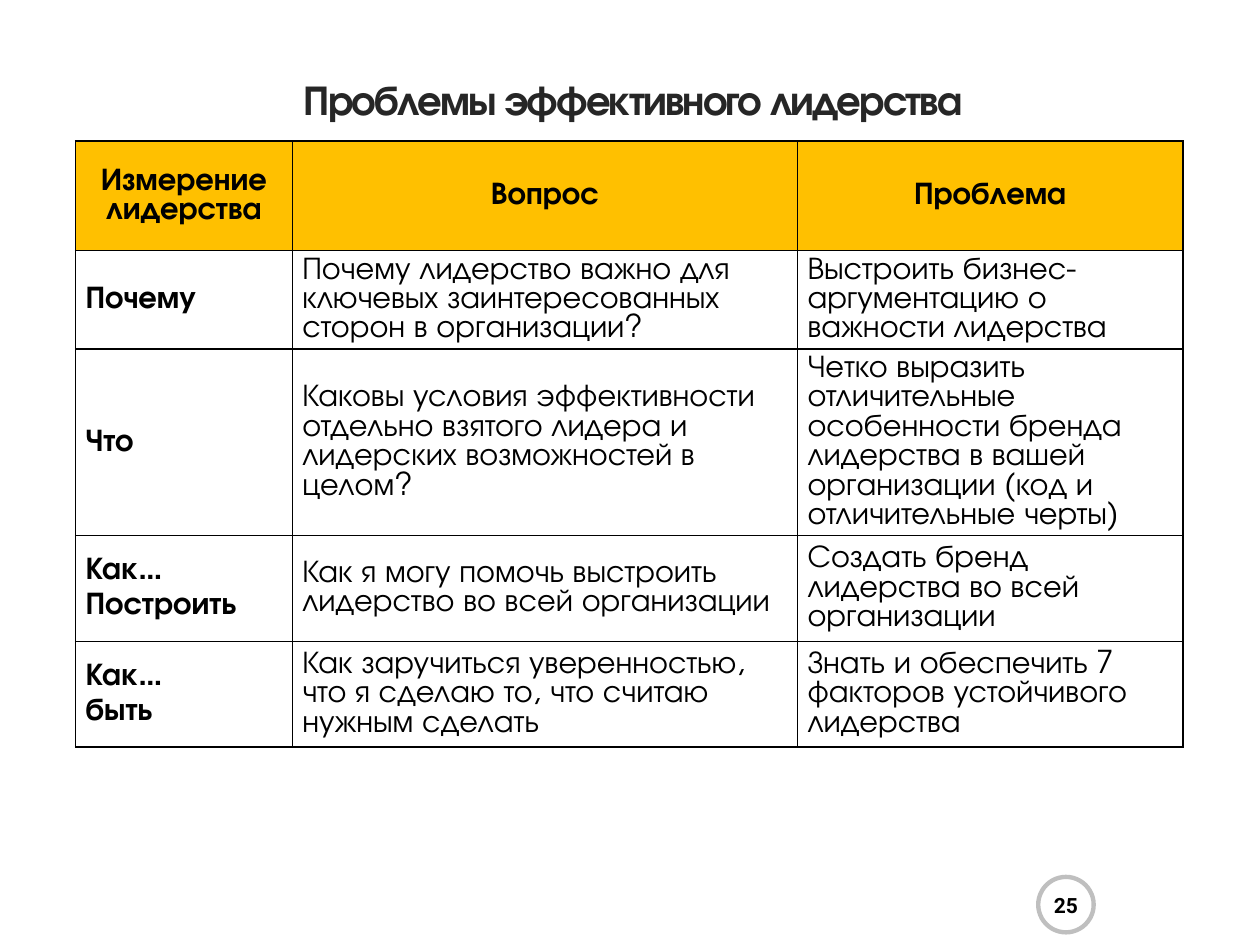
import pptx
import pptx.dml.color
import pptx.enum.shapes
import pptx.enum.text
import pptx.oxml
import pptx.oxml.ns
import pptx.util
from pptx.util import Inches

RGBColor = pptx.dml.color.RGBColor
Align = pptx.enum.text.PP_ALIGN
MIDDLE = pptx.enum.text.MSO_ANCHOR.MIDDLE

BLACK = RGBColor(0x00, 0x00, 0x00)
WHITE = RGBColor(0xFF, 0xFF, 0xFF)
TITLE_GREY = RGBColor(0x26, 0x26, 0x26)
RING_GREY = RGBColor(0xBF, 0xBF, 0xBF)
AMBER = RGBColor(0xFF, 0xC0, 0x00)

BODY_FONT = "TeX Gyre Adventor"
NUMBER_FONT = "Roboto"

COLUMN_WIDTHS = [1.72, 4.01, 3.06]
ROW_HEIGHTS = [0.87, 0.75, 0.84, 0.84, 0.84]
ROWS = [
    ["Измерение лидерства", "Вопрос", "Проблема"],
    ["Почему",
     "Почему лидерство важно для ключевых заинтересованных сторон в организации?",
     "Выстроить бизнес-аргументацию о важности лидерства"],
    ["Что",
     "Каковы условия эффективности отдельно взятого лидера и лидерских возможностей в целом?",
     "Четко выразить отличительные особенности бренда лидерства в вашей "
     "организации (код и отличительные черты)"],
    ["Как…\nПостроить",
     "Как я могу помочь выстроить лидерство во всей организации",
     "Создать бренд лидерства во всей организации"],
    ["Как…\nбыть",
     "Как заручиться уверенностью, что я сделаю то, что считаю нужным сделать",
     "Знать и обеспечить 7 факторов устойчивого лидерства"],
]


def write_text(frame, text, font=BODY_FONT, size=18, color=BLACK, bold=False,
               align=Align.LEFT, line_spacing=None, tracking=None):
    """Write one paragraph per line of text, spaced by a fifth of the size."""
    frame.word_wrap = True
    for index, line in enumerate(text.split("\n")):
        paragraph = frame.add_paragraph() if index else frame.paragraphs[0]
        paragraph.alignment = align
        paragraph.space_before = pptx.util.Pt(0.2 * size if index else 0)
        if line_spacing:
            paragraph.line_spacing = pptx.util.Pt(line_spacing)
        run = paragraph.add_run()
        run.text = line
        run.font.name = font
        run.font.size = pptx.util.Pt(size)
        run.font.bold = bold
        run.font.color.rgb = color
        if tracking:
            run.font._element.set("spc", str(round(tracking * 100)))


def set_borders(cell, color=BLACK, width=1):
    properties = cell._tc.get_or_add_tcPr()
    for index, side in enumerate(("lnL", "lnR", "lnT", "lnB")):
        border = pptx.oxml.parse_xml(
            f'<a:{side} {pptx.oxml.ns.nsdecls("a")} w="{pptx.util.Pt(width)}">'
            f'<a:solidFill><a:srgbClr val="{color}"/></a:solidFill></a:{side}>')
        properties.insert(index, border)


class SlideBuilder:
    """Holds the current slide and draws its parts in one style."""

    def __init__(self, presentation):
        self.slide = presentation.slides.add_slide(presentation.slide_layouts[5])
        background = self.slide.background.fill
        background.solid()
        background.fore_color.rgb = WHITE

    def title(self, text, left, top, width, height):
        title = self.slide.shapes.title
        title.left, title.top = Inches(left), Inches(top)
        title.width, title.height = Inches(width), Inches(height)
        title.text_frame.vertical_anchor = MIDDLE
        write_text(title.text_frame, text, size=24, color=TITLE_GREY, bold=True,
                   align=Align.CENTER, line_spacing=25.1, tracking=-1.1)

    def table(self, rows, left, top):
        table = self.slide.shapes.add_table(
            len(rows), len(COLUMN_WIDTHS), Inches(left), Inches(top),
            Inches(sum(COLUMN_WIDTHS)), Inches(sum(ROW_HEIGHTS))).table
        table.first_row = table.horz_banding = False
        for column, width in zip(table.columns, COLUMN_WIDTHS):
            column.width = Inches(width)
        for row, height in zip(table.rows, ROW_HEIGHTS):
            row.height = Inches(height)
        for row_index, texts in enumerate(rows):
            for column_index, text in enumerate(texts):
                self.cell(table.cell(row_index, column_index), text,
                          header=row_index == 0, label=column_index == 0)

    def cell(self, cell, text, header, label):
        cell.fill.solid()
        cell.fill.fore_color.rgb = AMBER if header else WHITE
        cell.vertical_anchor = MIDDLE
        cell.margin_left = cell.margin_right = Inches(0.08)
        cell.margin_top = cell.margin_bottom = Inches(0.04)
        set_borders(cell)
        write_text(cell.text_frame, text, bold=header or label,
                   align=Align.CENTER if header else Align.LEFT)

    def page_number(self, text, left, top, size):
        ring = self.slide.shapes.add_shape(
            pptx.enum.shapes.MSO_SHAPE.OVAL,
            Inches(left), Inches(top), Inches(size), Inches(size))
        ring.shadow.inherit = False
        ring.fill.solid()
        ring.fill.fore_color.rgb = WHITE
        ring.line.color.rgb = RING_GREY
        ring.line.width = pptx.util.Pt(2.5)
        frame = ring.text_frame
        frame.margin_left = frame.margin_right = 0
        frame.margin_top = frame.margin_bottom = 0
        frame.vertical_anchor = MIDDLE
        write_text(frame, text, font=NUMBER_FONT, size=12, bold=True,
                   align=Align.CENTER)


def main():
    presentation = pptx.Presentation()
    presentation.slide_width = Inches(10)
    presentation.slide_height = Inches(7.5)

    builder = SlideBuilder(presentation)
    # Heading
    builder.title("Проблемы эффективного лидерства", 0.75, 0.42, 8.55, 0.78)
    # Leadership dimensions with their questions and challenges
    builder.table(ROWS, 0.6, 1.12)
    # Page number
    builder.page_number("25", 8.24, 6.96, 0.44)

    presentation.save("out.pptx")


if __name__ == "__main__":
    main()
